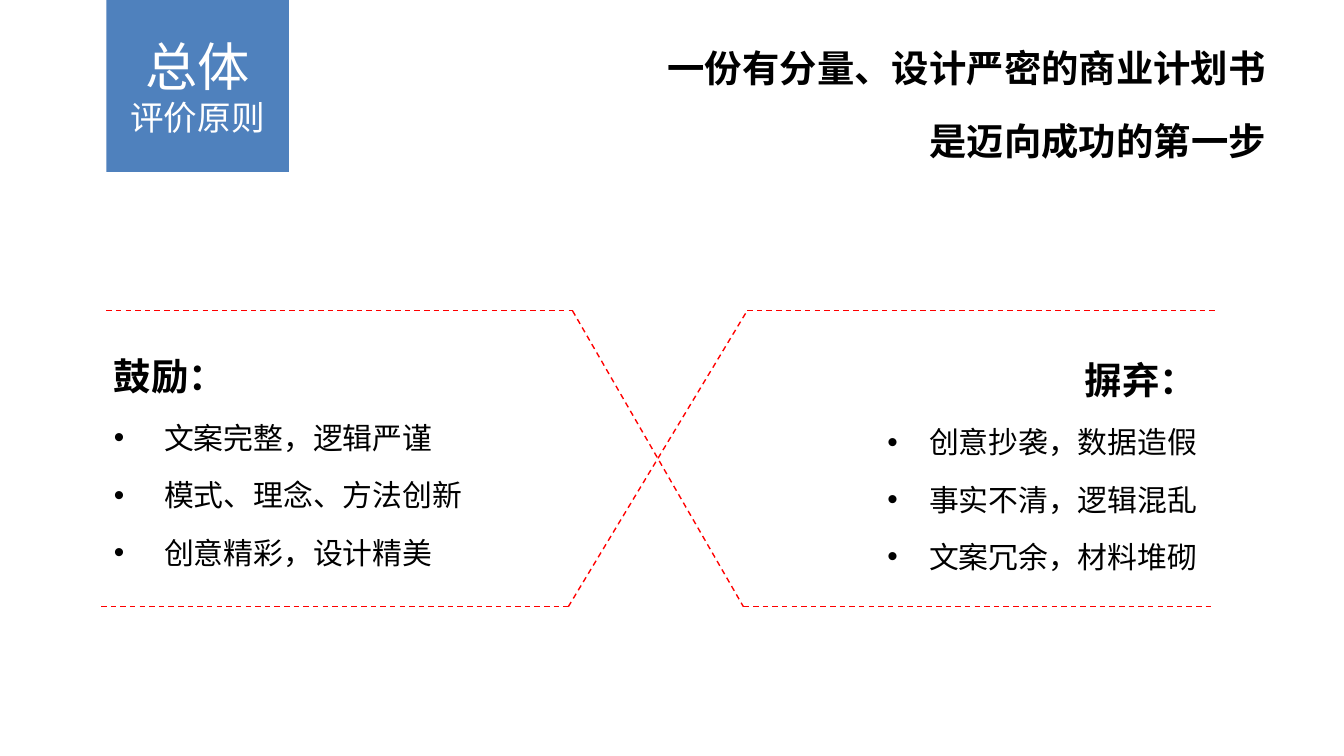
from lxml import etree
from pptx import Presentation
from pptx.dml.color import RGBColor
from pptx.enum.dml import MSO_LINE
from pptx.enum.shapes import MSO_CONNECTOR, MSO_SHAPE
from pptx.enum.text import MSO_ANCHOR, MSO_AUTO_SIZE, PP_ALIGN
from pptx.oxml.ns import qn
from pptx.util import Cm, Pt

BLACK = RGBColor(0x00, 0x00, 0x00)
WHITE = RGBColor(0xFF, 0xFF, 0xFF)
BLUE = RGBColor(0x4F, 0x81, 0xBD)
RED = RGBColor(0xFF, 0x00, 0x00)
FONT = "Noto Sans CJK SC"
LEFT, CENTER, RIGHT = PP_ALIGN.LEFT, PP_ALIGN.CENTER, PP_ALIGN.RIGHT
TOP, MIDDLE = MSO_ANCHOR.TOP, MSO_ANCHOR.MIDDLE
NO_AUTOFIT = MSO_AUTO_SIZE.NONE
STRAIGHT = MSO_CONNECTOR.STRAIGHT
RECTANGLE = MSO_SHAPE.RECTANGLE
DASH = MSO_LINE.DASH
TWO_CONTENT_LAYOUT = 3


def place(shape, left, top, width, height, anchor):
    """Position a shape, in centimetres, and prepare its text frame."""
    shape.left, shape.top = Cm(left), Cm(top)
    shape.width, shape.height = Cm(width), Cm(height)
    frame_format = {"word_wrap": True, "auto_size": NO_AUTOFIT, "vertical_anchor": anchor}
    for name, value in frame_format.items():
        setattr(shape.text_frame, name, value)


def write(paragraph, text, size, color, bold, alignment, line_spacing=1.0,
          space_before=0, bullet_indent=0):
    """Fill a paragraph; a bullet indent in centimetres gives it a bullet."""
    paragraph_format = {"alignment": alignment, "line_spacing": line_spacing,
                        "space_before": Pt(space_before)}
    for name, value in paragraph_format.items():
        setattr(paragraph, name, value)
    properties = paragraph._p.get_or_add_pPr()
    properties.set("marL", str(Cm(bullet_indent)))
    properties.set("indent", str(-Cm(bullet_indent)))
    if bullet_indent:
        etree.SubElement(properties, qn("a:buFont")).set("typeface", "Arial")
        etree.SubElement(properties, qn("a:buChar")).set("char", "•")
    else:
        etree.SubElement(properties, qn("a:buNone"))
    run = paragraph.add_run()
    run.text = text
    for name, value in {"name": FONT, "size": Pt(size), "bold": bold}.items():
        setattr(run.font, name, value)
    run.font.color.rgb = color
    east_asian = etree.Element(qn("a:ea"), typeface=FONT)
    run._r.rPr.find(qn("a:latin")).addnext(east_asian)


presentation = Presentation()
presentation.slide_width, presentation.slide_height = Cm(25.4), Cm(14.28)
slide = presentation.slides.add_slide(presentation.slide_layouts[TWO_CONTENT_LAYOUT])
title, encourage_list, reject_list = list(slide.placeholders)[:3]
for placeholder in list(slide.placeholders)[3:]:
    placeholder.element.getparent().remove(placeholder.element)

# Headline
place(title, 12.19, 0.51, 11.99, 2.74, MIDDLE)
write(title.text_frame.paragraphs[0], "一份有分量、设计严密的商业计划书",
      20, BLACK, True, RIGHT, 1.2)
write(title.text_frame.add_paragraph(), "是迈向成功的第一步",
      20, BLACK, True, RIGHT, 1.2, space_before=10)

# Encouraged and rejected qualities
place(encourage_list, 1.9, 6.35, 9.63, 4.24, MIDDLE)
place(reject_list, 13.51, 6.12, 9.37, 4.9, TOP)
columns = [
    (encourage_list, LEFT, 0.95, "鼓励：",
     ["文案完整，逻辑严谨", "模式、理念、方法创新", "创意精彩，设计精美"]),
    (reject_list, RIGHT, 0.79, "摒弃：",
     ["创意抄袭，数据造假", "事实不清，逻辑混乱", "文案冗余，材料堆砌"]),
]
for shape, alignment, indent, heading, items in columns:
    frame = shape.text_frame
    write(frame.paragraphs[0], heading, 20, BLACK, True, alignment, 1.6)
    for item in items:
        write(frame.add_paragraph(), item, 16, BLACK, False, alignment, 1.6,
              bullet_indent=indent)

# Section badge
badge = slide.shapes.add_shape(RECTANGLE, 0, 0, 0, 0)
place(badge, 2.01, 0, 3.45, 3.25, MIDDLE)
badge.shadow.inherit = False
badge.fill.solid()
badge.fill.fore_color.rgb = BLUE
badge.line.fill.background()
write(badge.text_frame.paragraphs[0], "总体", 28, WHITE, False, CENTER)
write(badge.text_frame.add_paragraph(), "评价原则", 18, WHITE, False, CENTER)

# Crossing dashed frame: two paths, each running outer edge, bend, bend, outer edge
frame_top, frame_bottom = 5.87, 11.46
falling_path = [(2.01, frame_top), (10.82, frame_top),
                (14.05, frame_bottom), (22.89, frame_bottom)]
rising_path = [(1.91, frame_bottom), (10.74, frame_bottom),
               (14.12, frame_top), (22.96, frame_top)]
for path_points in (falling_path, rising_path):
    for start, end in zip(path_points, path_points[1:]):
        connector = slide.shapes.add_connector(
            STRAIGHT, *[Cm(value) for value in start + end])
        connector.line.color.rgb = RED
        connector.line.width = Pt(0.75)
        connector.line.dash_style = DASH
        etree.SubElement(connector._element.spPr, qn("a:effectLst"))

presentation.save("out.pptx")
